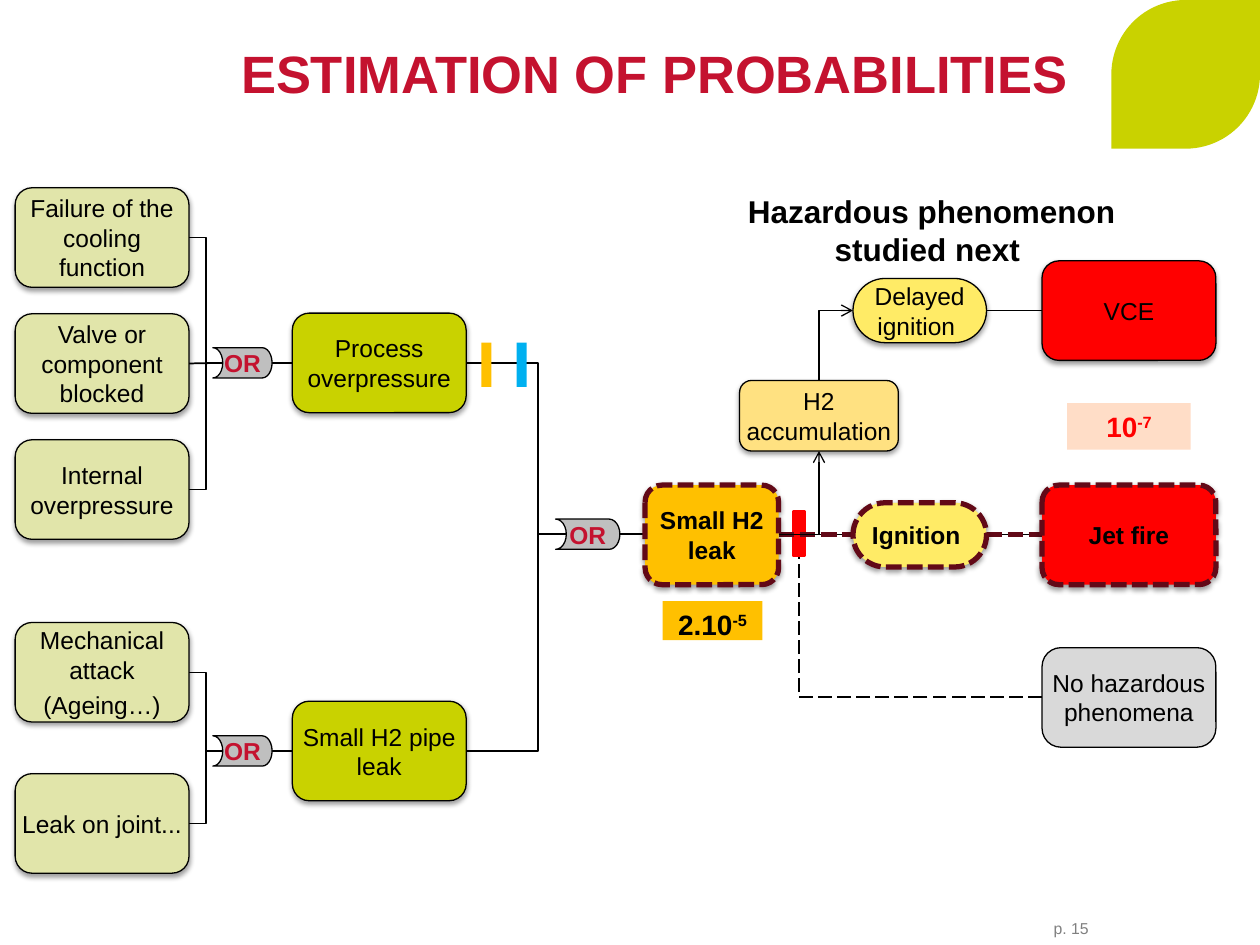
from dataclasses import dataclass

from lxml import etree
from pptx import Presentation
from pptx import util as u
from pptx.dml.color import RGBColor
from pptx.enum import dml, shapes, text
from pptx.oxml.ns import qn


@dataclass(frozen=True)
class Theme:
    font: str = "Arial"
    black: str = "000000"
    crimson: str = "C4122F"
    maroon: str = "620917"
    red: str = "FF0000"
    lime: str = "C9D200"
    pale_lime: str = "E1E5AA"
    amber: str = "FFC000"
    sand: str = "FFE181"
    yellow: str = "FFEB66"
    peach: str = "FFDDC7"
    blue: str = "00B0F0"
    gate_grey: str = "BFBFBF"
    light_grey: str = "D9D9D9"
    page_grey: str = "808080"
    title_size: int = 30
    heading_size: int = 18
    value_size: int = 16
    body_size: int = 14
    page_size: int = 9


@dataclass(frozen=True)
class Box:
    """Left, top, width and height in inches."""
    left: float
    top: float
    width: float
    height: float

    def inside(self, x, y, width, height):
        return Box(self.left + x, self.top + y, width, height)

    @property
    def middle(self):
        return self.top + self.height / 2

    @property
    def start(self):
        return self.left, self.middle

    @property
    def end(self):
        return self.left + self.width, self.middle

    @property
    def lengths(self):
        return [u.Inches(v) for v in (self.left, self.top, self.width, self.height)]


THEME = Theme()
PRESET = shapes.MSO_SHAPE
DASH = dml.MSO_LINE
CRITICAL = dict(color=THEME.maroon, width=3, dash=DASH.SQUARE_DOT)
EVENT_SIZE = (1.38, 0.79)


def write(shape, lines, margin=0, anchor=text.MSO_ANCHOR.MIDDLE,
          align=text.PP_ALIGN.CENTER, wrap=True, **font_format):
    """Fill a shape with paragraphs; what follows ^ is superscript."""
    frame = shape.text_frame
    frame.word_wrap, frame.vertical_anchor = wrap, anchor
    for side in ("left", "right", "top", "bottom"):
        setattr(frame, f"margin_{side}", u.Inches(margin))
    values = dict(size=THEME.body_size, bold=False, color=THEME.black) | font_format
    color = RGBColor.from_string(values.pop("color"))
    values |= dict(size=u.Pt(values["size"]), name=THEME.font)
    for index, line in enumerate(lines):
        paragraph = frame.add_paragraph() if index else frame.paragraphs[0]
        paragraph.alignment = align
        paragraph.space_before = u.Pt(3 if index else 0)
        base, _, power = line.partition("^")
        for part in filter(None, (base, power)):
            run = paragraph.add_run()
            run.text = part
            for name, value in values.items():
                setattr(run.font, name, value)
            run.font.color.rgb = color
        if power:
            run._r.get_or_add_rPr().set("baseline", "30000")


def set_line(line, color=THEME.black, width=0.75, dash=None):
    line.color.rgb = RGBColor.from_string(color)
    line.width = u.Pt(width)
    if dash:
        line.dash_style = dash


def add_block(slide, box, fill, preset=PRESET.RECTANGLE, outline=None, shadow=False, adjust=()):
    shape = slide.shapes.add_shape(preset, *box.lengths)
    for index, value in enumerate(adjust):
        shape.adjustments[index] = value
    shape.fill.solid()
    shape.fill.fore_color.rgb = RGBColor.from_string(fill)
    if outline is None:
        shape.line.fill.background()
    else:
        set_line(shape.line, **outline)
    shape.shadow.inherit = False
    if shadow:
        effects = shape.element.spPr.find(qn("a:effectLst"))
        outer = etree.SubElement(effects, qn("a:outerShdw"), blurRad=str(u.Pt(3.1)),
                                 dist=str(u.Pt(1.6)), dir="5400000", rotWithShape="0")
        tint = etree.SubElement(outer, qn("a:srgbClr"), val=THEME.black)
        etree.SubElement(tint, qn("a:alpha"), val="38000")
    return shape


def add_event(slide, box, lines, fill, outline=None, shadow=True, radius=0.17, **font_format):
    shape = add_block(slide, box, fill, PRESET.ROUNDED_RECTANGLE, outline or {}, shadow, [radius])
    write(shape, lines, **font_format)


def add_gate(slide, box):
    shape = add_block(slide, box, THEME.gate_grey, PRESET.FLOWCHART_STORED_DATA, {})
    shape.element.spPr.find(qn("a:xfrm")).set("flipH", "1")
    write(shape, ["OR"], bold=True, color=THEME.crimson)


def add_link(slide, start, end, bend=None, corner=False, arrow=None, **line_format):
    """Straight line, elbow with its bend at a share of the width, or one corner."""
    elbow = bend is not None or corner
    kind = shapes.MSO_CONNECTOR.ELBOW if elbow else shapes.MSO_CONNECTOR.STRAIGHT
    link = slide.shapes.add_connector(kind, *[u.Inches(v) for v in (*start, *end)])
    properties = link.element.spPr
    geometry = properties.find(qn("a:prstGeom"))
    if corner:
        geometry.set("prst", "bentConnector2")
    elif elbow:
        etree.SubElement(geometry.find(qn("a:avLst")), qn("a:gd"), name="adj1",
                         fmla=f"val {round(bend * 100000)}")
    set_line(link.line, **line_format)
    if arrow:
        etree.SubElement(properties.find(qn("a:ln")), qn(f"a:{arrow}"), type="arrow")
    etree.SubElement(properties, qn("a:effectLst"))


def add_header(slide, box):
    add_block(slide, box.inside(8.82, 0, 1.18, 1.18), THEME.lime,
              PRESET.ROUND_2_DIAG_RECTANGLE, adjust=(0.5, 0))
    title = slide.shapes.title
    title.left, title.top, title.width, title.height = box.inside(1.77, 0.28, 6.71, 0.55).lengths
    write(title, ["ESTIMATION OF PROBABILITIES"], anchor=text.MSO_ANCHOR.BOTTOM,
          align=text.PP_ALIGN.RIGHT, size=THEME.title_size, bold=True, color=THEME.crimson)
    title.text_frame.paragraphs[0].line_spacing = 0.9


def add_branch(slide, box, causes, result, result_middle, width):
    """Causes joined by an OR gate into one result; returns the exit point."""
    step = (box.height - EVENT_SIZE[1]) / (len(causes) - 1)
    gate = box.inside(1.57, result_middle - 0.12, 0.47, 0.24)
    outcome = box.inside(2.2, result_middle - EVENT_SIZE[1] / 2, *EVENT_SIZE)
    for index, lines in enumerate(causes):
        cause = box.inside(0, index * step, *EVENT_SIZE)
        join = (gate.left + 0.08, gate.middle)
        level = abs(cause.middle - gate.middle) < 0.02
        add_link(slide, cause.end, join, bend=None if level else 0.5, width=width)
        add_event(slide, cause, lines, THEME.pale_lime)
    add_link(slide, gate.end, outcome.start, width=width)
    add_gate(slide, gate)
    add_event(slide, outcome, [result], THEME.lime)
    return outcome.end


def add_fault_tree(slide, box):
    exits = [
        add_branch(slide, box.inside(0, 0, 3.58, 2.79),
                   [["Failure of the cooling function"], ["Valve or component blocked"],
                    ["Internal overpressure"]], "Process overpressure", 1.39, 1),
        add_branch(slide, box.inside(0, 3.45, 3.58, 1.99),
                   [["Mechanical attack", "(Ageing…)"], ["Leak on joint..."]],
                   "Small H2 pipe leak", 1.02, 0.75),
    ]
    gate = box.inside(4.29, 2.63, 0.51, 0.24)
    add_gate(slide, gate)
    for point in exits:
        add_link(slide, point, (gate.left + 0.08, gate.middle), bend=0.72, width=1)
    add_link(slide, gate.end, (box.left + box.width, gate.middle), width=1)
    for x, color in ((3.7, THEME.amber), (3.98, THEME.blue)):
        add_block(slide, box.inside(x, 1.23, 0.08, 0.35), color)


def add_event_tree(slide, box):
    leak = box.inside(0, 2.38, 1.06, 0.79)
    ignition = box.inside(1.65, 2.52, 1.06, 0.51)
    jet_fire = box.inside(3.15, 2.38, *EVENT_SIZE)
    harmless = box.inside(3.15, 3.67, *EVENT_SIZE)
    delayed = box.inside(1.65, 0.74, 1.06, 0.51)
    explosion = box.inside(3.15, 0.6, *EVENT_SIZE)
    cloud = box.inside(0.75, 1.55, 1.26, 0.56)
    barrier = box.inside(1.18, 2.59, 0.08, 0.35)
    cloud_center = cloud.left + cloud.width / 2

    add_link(slide, harmless.start, (barrier.left + 0.04, barrier.top + barrier.height),
             corner=True, width=1, dash=DASH.LONG_DASH)
    add_event(slide, harmless, ["No hazardous phenomena"], THEME.light_grey,
              shadow=False, radius=0.19)
    add_block(slide, barrier, THEME.red, outline=dict(color=THEME.red, width=2))
    for before, after in ((leak, ignition), (ignition, jet_fire)):
        add_link(slide, before.end, after.start)
        add_link(slide, before.end, after.start, **CRITICAL)
    for place, label, fill, radius in ((leak, "Small H2 leak", THEME.amber, 0.17),
                                       (ignition, "Ignition ", THEME.yellow, 0.5),
                                       (jet_fire, "Jet fire", THEME.red, 0.17)):
        add_event(slide, place, [label], fill, CRITICAL, radius=radius, bold=True)

    add_link(slide, leak.end, (cloud_center, cloud.top + cloud.height), corner=True, arrow="tailEnd")
    add_link(slide, delayed.start, (cloud_center, cloud.top), corner=True, arrow="headEnd")
    add_link(slide, delayed.end, explosion.start)
    for place, label, fill, radius in ((cloud, "H2 accumulation", THEME.sand, 0.17),
                                       (delayed, "Delayed ignition ", THEME.yellow, 0.5),
                                       (explosion, "VCE", THEME.red, 0.17)):
        add_event(slide, place, [label], fill, radius=radius)

    heading = slide.shapes.add_textbox(*box.inside(0.41, 0, 3.73, 0.71).lengths)
    write(heading, ["Hazardous phenomenon studied next "], margin=0.08,
          size=THEME.heading_size, bold=True)
    for place, label, fill, color in (
            (box.inside(3.35, 1.73, 0.98, 0.37), "10^-7", THEME.peach, THEME.red),
            (box.inside(0.14, 3.3, 0.79, 0.31), "2.10^-5", THEME.amber, THEME.black)):
        write(add_block(slide, place, fill), [label], margin=0.05, anchor=text.MSO_ANCHOR.TOP,
              size=THEME.value_size, bold=True, color=color)


def add_page_number(slide, box):
    number = slide.shapes.add_textbox(*box.lengths)
    write(number, ["p. 15"], anchor=text.MSO_ANCHOR.BOTTOM, align=text.PP_ALIGN.RIGHT,
          wrap=False, size=THEME.page_size, color=THEME.page_grey)


def main():
    presentation = Presentation()
    presentation.slide_width, presentation.slide_height = u.Inches(10), u.Inches(7.5)
    slide = presentation.slides.add_slide(presentation.slide_layouts[5])
    add_header(slide, Box(0, 0, 10, 1.26))
    add_fault_tree(slide, Box(0.12, 1.49, 5, 5.44))
    add_event_tree(slide, Box(5.12, 1.47, 4.53, 4.46))
    add_page_number(slide, Box(8.26, 7.3, 0.38, 0.14))
    presentation.save("out.pptx")


if __name__ == "__main__":
    main()
